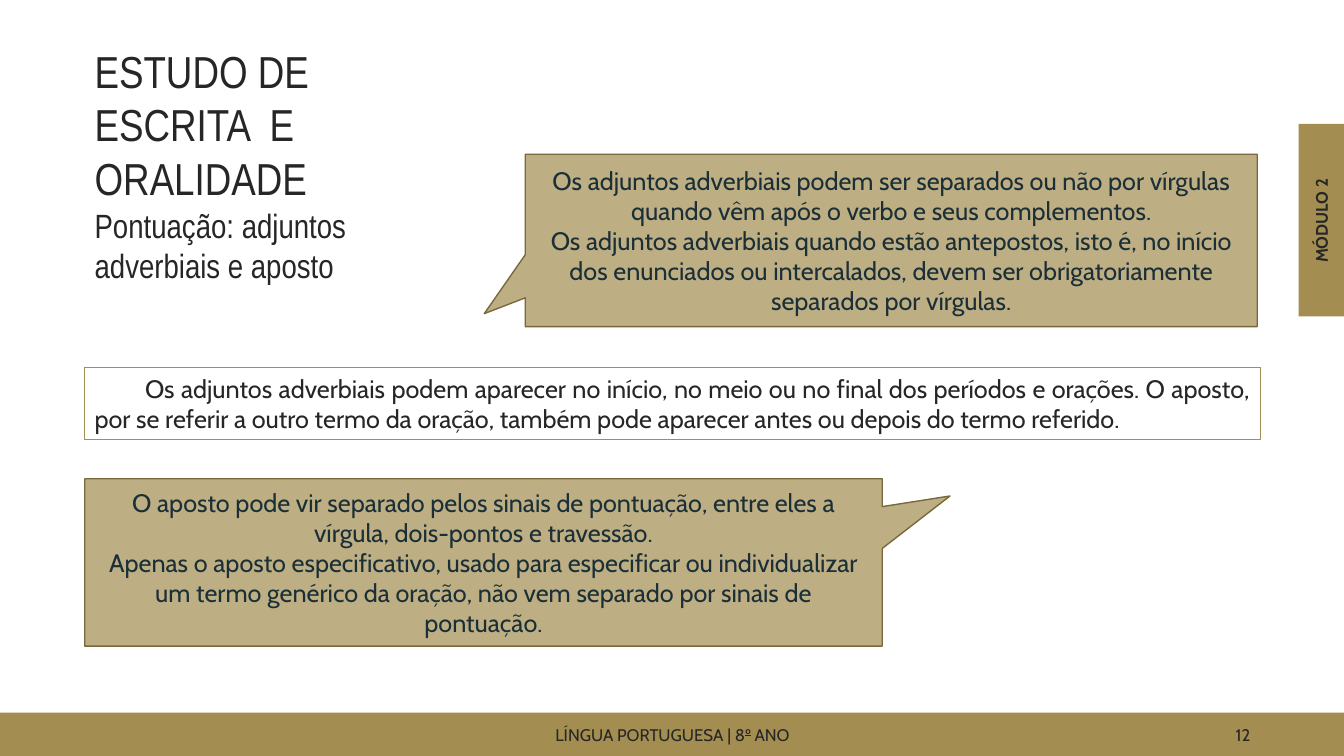
from pptx import Presentation
from pptx.dml.color import RGBColor
from pptx.enum.shapes import MSO_SHAPE
from pptx.enum.text import MSO_ANCHOR, MSO_AUTO_SIZE, PP_ALIGN
from pptx.oxml.ns import qn
from pptx.util import Inches, Pt
from lxml.etree import SubElement

COLORS = {"gold": "A38D51", "edge": "79683C", "text": "262626", "callout": "1B2F36"}


class SlideBuilder:
    """Holds the style and the current slide."""

    def __init__(self, page, font="Cabin"):
        self.page = page
        self.font = font

    @staticmethod
    def color(name):
        return RGBColor.from_string(COLORS[name])

    def fill_text(self, shape, paras, align=PP_ALIGN.LEFT, anchor=MSO_ANCHOR.TOP,
                  grow=False, first_indent=0, space_after=0):
        """Each paragraph is a list of (text, format values, baseline) spans."""
        frame = shape.text_frame
        frame.word_wrap = True
        frame.vertical_anchor = anchor
        if grow:
            frame.auto_size = MSO_AUTO_SIZE.SHAPE_TO_FIT_TEXT
        for index, spans in enumerate(paras):
            para = frame.add_paragraph() if index else frame.paragraphs[0]
            para.alignment = align
            para.space_after = Pt(space_after)
            if first_indent:
                para._p.get_or_add_pPr().set("indent", str(Inches(first_indent)))
            for text, values, baseline in spans:
                span = para.add_run()
                span.text = text
                values = {"name": self.font, "size": Pt(12), "color": "text"} | values
                span.font.color.rgb = self.color(values.pop("color"))
                for key, value in values.items():
                    setattr(span.font, key, value)
                if baseline:
                    span.font._element.set("baseline", str(baseline * 1000))

    def text(self, place, paras, rotation=0, **layout):
        box = self.page.shapes.add_textbox(*map(Inches, place))
        box.rotation = rotation
        self.fill_text(box, paras, **layout)

    def panel(self, place, kind=MSO_SHAPE.RECTANGLE, fill=None, line=None, width=1):
        shape = self.page.shapes.add_shape(kind, *map(Inches, place))
        shape.shadow.inherit = False
        if fill:
            shape.fill.solid()
            shape.fill.fore_color.rgb = self.color(fill)
        else:
            shape.fill.background()
        if line:
            shape.line.color.rgb = self.color(line)
            shape.line.width = Pt(width)
        else:
            shape.line.fill.background()
        return shape

    def callout(self, place, tip, texts, opacity=70):
        shape = self.panel(place, MSO_SHAPE.RECTANGULAR_CALLOUT, "gold", "edge")
        for index, value in enumerate(tip):
            shape.adjustments[index] = value
        tint = shape._element.spPr.find(qn("a:solidFill"))[0]
        SubElement(tint, qn("a:alpha")).set("val", str(opacity * 1000))
        values = {"size": Pt(18), "color": "callout"}
        self.fill_text(shape, [[(text, values, 0)] for text in texts],
                       align=PP_ALIGN.CENTER, anchor=MSO_ANCHOR.MIDDLE)


def main():
    deck = Presentation()
    deck.slide_width, deck.slide_height = Inches(13.33), Inches(7.5)
    page = deck.slides.add_slide(deck.slide_layouts[6])
    build = SlideBuilder(page)

    # Footer
    build.panel((0, 7.07, 13.33, 0.45), fill="gold")
    footer = {"anchor": MSO_ANCHOR.MIDDLE, "space_after": 6}
    build.text((4.42, 7.1, 4.5, 0.38),
               [[("LÍNGUA PORTUGUESA | 8", {}, 0),
                 ("o", {"bold": True, "underline": True}, 45),
                 (" ANO", {}, 0)]], align=PP_ALIGN.CENTER, **footer)
    build.text((9.42, 7.1, 3.08, 0.38), [[("12", {}, 0)]],
               align=PP_ALIGN.RIGHT, **footer)

    # Module tab
    build.panel((12.88, 1.23, 0.45, 1.91), fill="gold")
    build.text((12.15, 2.04, 1.91, 0.3), [[("MÓDULO 2", {"bold": True}, 0)]],
               rotation=270, align=PP_ALIGN.CENTER, grow=True)

    # Title
    narrow = {"name": "Arial Narrow"}
    build.text((0.84, 0.38, 3.89, 1.99),
               [[("ESTUDO DE ESCRITA  E ORALIDADE", narrow | {"size": Pt(32)}, 0)],
                [("Pontuação: adjuntos adverbiais e aposto", narrow | {"size": Pt(24)}, 0)]],
               grow=True)

    # Framed explanation
    frame = build.panel((0.84, 3.65, 11.66, 0.71), line="gold", width=0.75)
    build.fill_text(frame, [[(
        "Os adjuntos adverbiais podem aparecer no início, no meio ou no final dos "
        "períodos e orações. O aposto, por se referir a outro termo da oração, também "
        "pode aparecer antes ou depois do termo referido.", {"size": Pt(18)}, 0)]],
        align=PP_ALIGN.JUSTIFY, anchor=MSO_ANCHOR.MIDDLE, grow=True, first_indent=0.5)

    # Callouts
    build.callout((0.84, 4.75, 7.91, 1.66), (0.585, -0.397), [
        "O aposto pode vir separado pelos sinais de pontuação, entre eles a vírgula, "
        "dois-pontos e travessão.",
        "Apenas o aposto especificativo, usado para especificar ou individualizar um "
        "termo genérico da oração, não vem separado por sinais de pontuação."])
    build.callout((5.21, 1.53, 7.26, 1.71), (-0.556, 0.425), [
        "Os adjuntos adverbiais podem ser separados ou não por vírgulas quando vêm após "
        "o verbo e seus complementos.",
        "Os adjuntos adverbiais quando estão antepostos, isto é, no início dos enunciados "
        "ou intercalados, devem ser obrigatoriamente separados por vírgulas."])

    deck.save("out.pptx")


if __name__ == "__main__":
    main()
